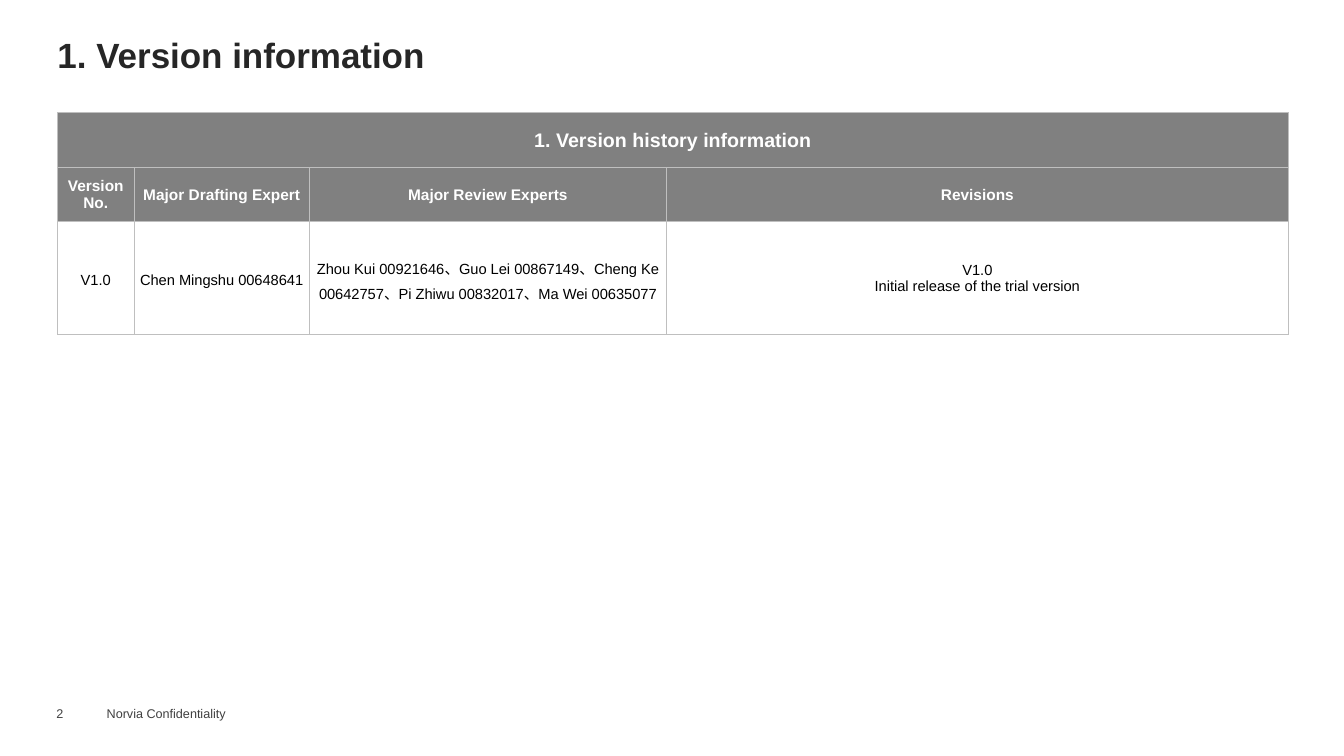
from dataclasses import dataclass

from lxml.etree import SubElement
from pptx import Presentation
from pptx.dml.color import RGBColor
from pptx.enum.text import MSO_ANCHOR, PP_ALIGN
from pptx.oxml.ns import qn
from pptx.util import Inches, Pt

WIDE, HIGH = 13.33, 7.5
LEFT = 0.57
COLS = (0.76, 1.74, 3.54, 6.17)
ROWS = (0.54, 0.54, 1.12)

HEADS = ("Version No.", "Major Drafting Expert", "Major Review Experts", "Revisions")
EXPERTS = ("Zhou Kui 00921646", "Guo Lei 00867149", "Cheng Ke 00642757",
           "Pi Zhiwu 00832017", "Ma Wei 00635077")
ENTRY = ("V1.0", "Chen Mingshu 00648641", "、".join(EXPERTS),
         "V1.0\vInitial release of the trial version")


@dataclass(frozen=True)
class Style:
    size: float
    color: str
    bold: bool = False


@dataclass(frozen=True)
class Theme:
    font: str = "Arial"
    title: Style = Style(25, "262626", True)
    banner: Style = Style(14, "FFFFFF", True)
    head: Style = Style(11, "FFFFFF", True)
    body: Style = Style(10.5, "000000")
    foot: Style = Style(9, "404040")
    dark: str = "808080"
    light: str = "FFFFFF"
    rule: str = "BFBFBF"
    line: float = 0.75


THEME = Theme()


def write(frame, text, style, align=PP_ALIGN.LEFT, space=None):
    frame.text = text
    frame.word_wrap = True
    frame.vertical_anchor = MSO_ANCHOR.MIDDLE
    para = frame.paragraphs[0]
    para.alignment = align
    para.line_spacing = space
    for run in para.runs:
        font = run.font
        font.name = THEME.font
        font.size = Pt(style.size)
        font.bold = style.bold
        font.color.rgb = RGBColor.from_string(style.color)
    for gap in para._p.findall(qn("a:br")):
        SubElement(gap, qn("a:rPr"), sz=str(int(style.size * 100)))


def add_text(slide, box, text, style, pads=(0, 0, 0, 0), space=None):
    """Place text in a box given in inches; pads run left, top, right, bottom."""
    frame = slide.shapes.add_textbox(*map(Inches, box)).text_frame
    (frame.margin_left, frame.margin_top,
     frame.margin_right, frame.margin_bottom) = map(Inches, pads)
    write(frame, text, style, space=space)


def add_rules(cell):
    """Draw the four cell borders, which must come before the fill."""
    props = cell._tc.get_or_add_tcPr()
    for side in ("lnL", "lnR", "lnT", "lnB"):
        line = SubElement(props, qn(f"a:{side}"), w=str(Pt(THEME.line)))
        fill = SubElement(line, qn("a:solidFill"))
        SubElement(fill, qn("a:srgbClr"), val=THEME.rule)


def fill_cell(cell, text, style, fill, space=None):
    cell.margin_left = cell.margin_top = cell.margin_right = Inches(0.01)
    cell.margin_bottom = 0
    cell.vertical_anchor = MSO_ANCHOR.MIDDLE
    add_rules(cell)
    cell.fill.solid()
    cell.fill.fore_color.rgb = RGBColor.from_string(fill)
    if text:
        write(cell.text_frame, text, style, PP_ALIGN.CENTER, space)
        cell.vertical_anchor = MSO_ANCHOR.MIDDLE


def add_history(slide, top):
    table = slide.shapes.add_table(
        len(ROWS), len(COLS), Inches(LEFT), Inches(top),
        Inches(sum(COLS)), Inches(sum(ROWS))).table
    table.first_row = table.horz_banding = False
    for col, width in zip(table.columns, COLS):
        col.width = Inches(width)
    for row, height in zip(table.rows, ROWS):
        row.height = Inches(height)
    table.cell(0, 0).merge(table.cell(0, len(COLS) - 1))
    banner = ("1. Version history information", "", "", "")
    for i, text in enumerate(banner):
        fill_cell(table.cell(0, i), text, THEME.banner, THEME.dark)
    for i, (head, text) in enumerate(zip(HEADS, ENTRY)):
        fill_cell(table.cell(1, i), head, THEME.head, THEME.dark)
        space = None if "\v" in text else 1.2
        fill_cell(table.cell(2, i), text, THEME.body, THEME.light, space)


def main():
    deck = Presentation()
    deck.slide_width, deck.slide_height = Inches(WIDE), Inches(HIGH)
    slide = deck.slides.add_slide(deck.slide_layouts[6])
    add_text(slide, (0.96, 6.95, 3.83, 0.25), "Norvia Confidentiality",
             THEME.foot, (0.1, 0.05, 0.1, 0.05))
    add_text(slide, (0.56, 7, 0.55, 0.15), "2", THEME.foot)
    add_text(slide, (LEFT, 0.34, sum(COLS), 0.46), "1. Version information",
             THEME.title, (0, 0.05, 0.1, 0.05), 0.9)
    add_history(slide, 1.12)
    deck.save("out.pptx")


if __name__ == "__main__":
    main()
